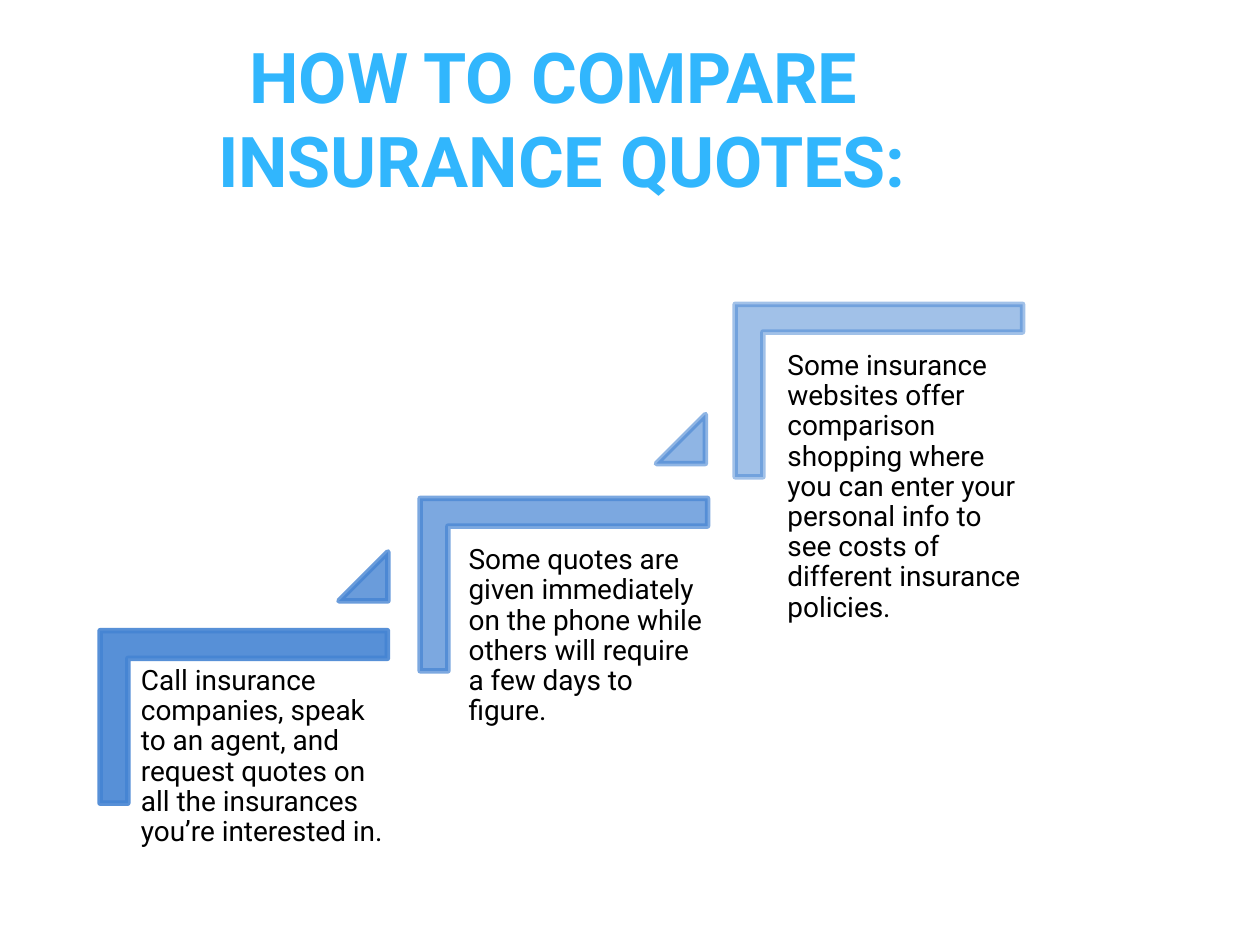
from dataclasses import dataclass

from lxml import etree
from pptx import Presentation
from pptx.dml import color
from pptx.enum import shapes, text
from pptx.oxml import ns
from pptx.util import Pt

COLORS = {"title": "31B6FD", "step": "4584D3", "body": "000000"}
FONT = "Roboto"
CORNER_WIDTH, CORNER_HEIGHT = 164.2, 98.6
CORNER_THICKNESS = 0.161
TRIANGLE_SIZE = 28
TEXT_WIDTH = 148.3
LINE_WIDTH = 3.15


@dataclass(frozen=True)
class Step:
    """One stair: its corner, its text box, and the triangle leading on."""

    wording: str
    corner: tuple[float, float]
    text_box: tuple[float, float, float]
    opacity: int
    triangle: tuple[float, float] | None = None


STEPS = [
    Step(
        "Call insurance companies, speak to an agent, and request quotes "
        "on all the insurances you’re interested in.",
        (57.2, 360.4), (75.6, 375.8, 132.5), 90, (193.7, 315.4),
    ),
    Step(
        "Some quotes are given immediately on the phone while others "
        "will require a few days to figure.",
        (240.1, 284.8), (262.8, 306.7, 198.7), 70, (375.1, 236.9),
    ),
    Step(
        "Some insurance websites offer comparison shopping where you can "
        "enter your personal info to see costs of different insurance policies.",
        (420.1, 173.9), (445, 195.8, 255.6), 50,
    ),
]


def paint(shape, opacity: int) -> None:
    """Give a shape the step colour, with fill and line equally see-through."""
    shape.shadow.inherit = False
    shape.line.width = Pt(LINE_WIDTH)
    for fill in (shape.fill, shape.line.fill):
        fill.solid()
        fill.fore_color.rgb = color.RGBColor.from_string(COLORS["step"])
    properties = shape.element.spPr
    for rgb in properties.iter(ns.qn("a:srgbClr")):
        etree.SubElement(rgb, ns.qn("a:alpha"), val=str(opacity * 1000))
    etree.SubElement(properties.find(ns.qn("a:ln")), ns.qn("a:round"))


def add_corner(slide, left: float, top: float, opacity: int) -> None:
    """Draw an L shape turned so that its arms run along the top and left."""
    shift = (CORNER_WIDTH - CORNER_HEIGHT) / 2
    shape = slide.shapes.add_shape(
        shapes.MSO_SHAPE.CORNER, Pt(left + shift), Pt(top - shift),
        Pt(CORNER_HEIGHT), Pt(CORNER_WIDTH),
    )
    shape.rotation = 90
    for index in range(2):
        shape.adjustments[index] = CORNER_THICKNESS
    paint(shape, opacity)


def add_triangle(slide, left: float, top: float, opacity: int) -> None:
    """Draw a right-angled triangle that points up to the next step."""
    shape = slide.shapes.add_shape(
        shapes.MSO_SHAPE.ISOSCELES_TRIANGLE, Pt(left), Pt(top),
        Pt(TRIANGLE_SIZE), Pt(TRIANGLE_SIZE),
    )
    shape.adjustments[0] = 1
    paint(shape, opacity)


def add_text_box(slide, box: tuple[float, float, float, float],
                 margins: tuple[float, float], anchor: text.MSO_ANCHOR):
    """Add a wrapping text box and return its first paragraph."""
    frame = slide.shapes.add_textbox(*map(Pt, box)).text_frame
    frame.word_wrap = True
    frame.vertical_anchor = anchor
    frame.margin_left = frame.margin_right = Pt(margins[0])
    frame.margin_top = frame.margin_bottom = Pt(margins[1])
    return frame.paragraphs[0]


def add_run(paragraph, wording: str, size: float, hue: str, bold: bool = False) -> None:
    """Append a styled run to a paragraph."""
    run = paragraph.add_run()
    run.text = wording
    run.font.name = FONT
    run.font.size = Pt(size)
    run.font.bold = bold
    run.font.color.rgb = color.RGBColor.from_string(COLORS[hue])


def add_title(slide) -> None:
    """Add the two-line centred title."""
    paragraph = add_text_box(slide, (36, 25.2, 570.2, 90), (3.6, 0), text.MSO_ANCHOR.BOTTOM)
    paragraph.alignment = text.PP_ALIGN.CENTER
    add_run(paragraph, "HOW TO COMPARE ", 40, "title", True)
    paragraph.add_line_break()
    add_run(paragraph, "INSURANCE QUOTES:", 40, "title", True)


def add_step(slide, step: Step) -> None:
    """Draw one step of the stair."""
    add_corner(slide, *step.corner, step.opacity)
    left, top, height = step.text_box
    paragraph = add_text_box(slide, (left, top, TEXT_WIDTH, height), (5, 5), text.MSO_ANCHOR.TOP)
    paragraph.line_spacing = 0.9
    add_run(paragraph, step.wording, 16, "body")
    if step.triangle:
        add_triangle(slide, *step.triangle, step.opacity - 10)


def main() -> None:
    """Build and save the slide."""
    presentation = Presentation()
    presentation.slide_width, presentation.slide_height = Pt(720), Pt(540)
    slide = presentation.slides.add_slide(presentation.slide_layouts[6])
    add_title(slide)
    for step in STEPS:
        add_step(slide, step)
    presentation.save("out.pptx")


if __name__ == "__main__":
    main()
